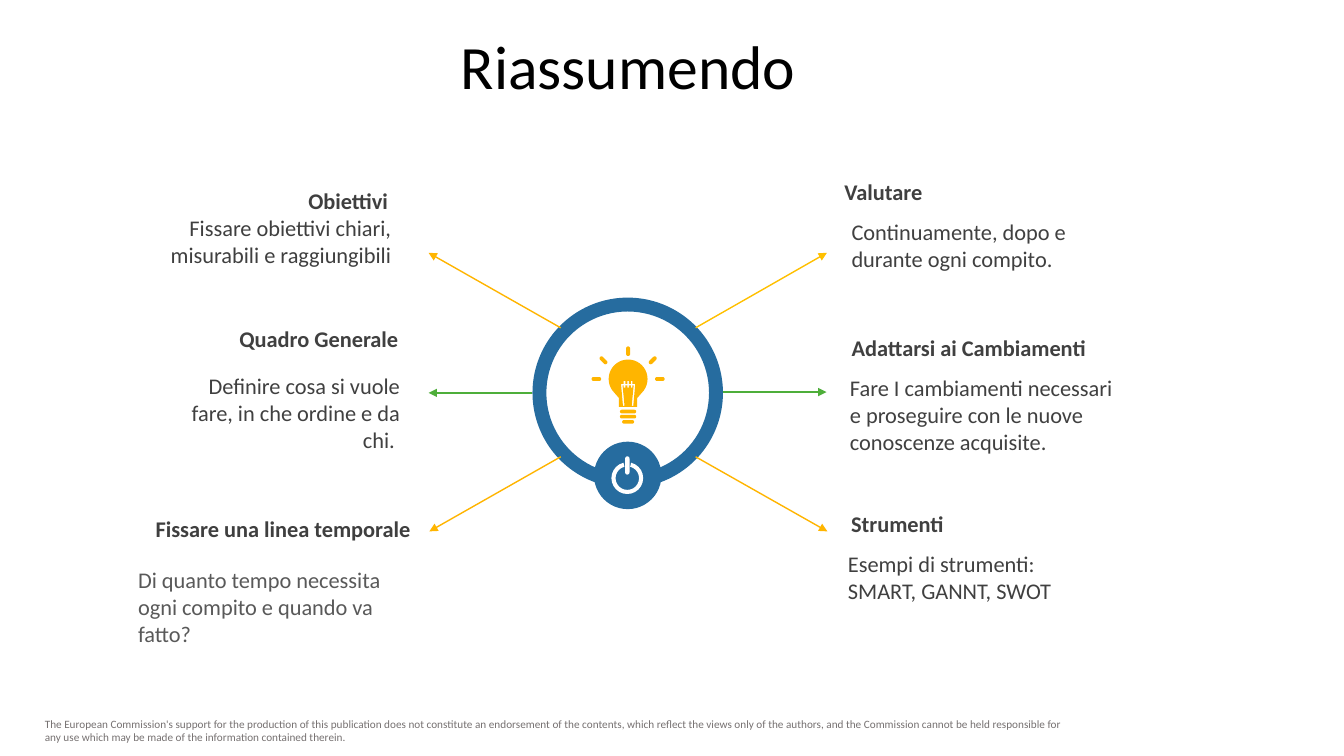
from math import cos, radians, sin

from lxml import etree
from pptx import Presentation
from pptx.dml.color import RGBColor
from pptx.enum import shapes, text
from pptx.oxml.ns import qn
from pptx.util import Cm, Pt

FONT = "Calibri"
BLUE, YELLOW, GOLD, GREEN = "266C9F", "FFB500", "FFC000", "4EAE3A"
WHITE, DARK, CHARCOAL, GREY, PALE = "FFFFFF", "404040", "3F3F3F", "595959", "767171"
LEFT, RIGHT, CENTER = text.PP_ALIGN.LEFT, text.PP_ALIGN.RIGHT, text.PP_ALIGN.CENTER
SHAPE = shapes.MSO_SHAPE

# heading and body: (wording, left, top, width, height, alignment, colour)
TOPICS = [
    (("Obiettivi", 3.78, 4.59, 6.25, 0.94, RIGHT, CHARCOAL),
     ("Fissare obiettivi chiari, misurabili e raggiungibili",
      3.3, 5.25, 6.81, 1.63, RIGHT, CHARCOAL)),
    (("Quadro Generale", 4.04, 8.06, 6.25, 0.94, RIGHT, DARK),
     ("Definire cosa si vuole fare, in che ordine e da chi. ",
      4.08, 9.25, 6.25, 2.31, RIGHT, DARK)),
    (("Fissare una linea temporale", 3.03, 12.5, 7.57, 1.63, RIGHT, CHARCOAL),
     ("Di quanto tempo necessita ogni compito e quando va fatto?",
      3.23, 14.13, 7.57, 2.31, LEFT, GREY)),
    (("Valutare", 21.03, 4.35, 6.25, 0.94, LEFT, DARK),
     ("Continuamente, dopo e durante ogni compito.",
      21.21, 5.35, 6.25, 1.63, LEFT, DARK)),
    (("Adattarsi ai Cambiamenti", 21.21, 7.95, 7.39, 1.63, LEFT, DARK),
     ("Fare I cambiamenti necessari e proseguire con le nuove conoscenze acquisite.",
      21.17, 9.3, 7.39, 2.31, LEFT, DARK)),
    (("Strumenti", 21.2, 12.73, 6.25, 0.94, LEFT, DARK),
     ("Esempi di strumenti: SMART, GANNT, SWOT",
      21.12, 13.72, 6.25, 1.63, LEFT, DARK)),
]

ARROWS = [
    (13.41, 9.9, 10.8, 9.9, GREEN),
    (18.21, 9.88, 20.83, 9.88, GREEN),
    (14.13, 8.26, 10.8, 6.37, YELLOW),
    (17.53, 8.26, 20.84, 6.37, GOLD),
    (17.53, 11.51, 20.85, 13.39, YELLOW),
    (14.13, 11.51, 10.82, 13.39, YELLOW),
]

FOOTER = (
    "The European Commission's support for the production of this publication does not "
    "constitute an endorsement of the contents, which reflect the views only of the authors, "
    "and the Commission cannot be held responsible for any use which may be made of the "
    "information contained therein."
)


def color(value):
    return RGBColor.from_string(value)


def style_text(box, size, tint, align, bold=False):
    frame = box.text_frame
    frame.word_wrap = True
    frame.auto_size = text.MSO_AUTO_SIZE.NONE
    for para in frame.paragraphs:
        para.alignment = align
        for span in para.runs:
            span.font.name = FONT
            span.font.size = Pt(size)
            span.font.bold = bold
            span.font.color.rgb = color(tint)


def add_text(page, wording, left, top, width, height, align, tint, size=16, bold=False):
    box = page.shapes.add_textbox(Cm(left), Cm(top), Cm(width), Cm(height))
    box.text_frame.text = wording
    box.text_frame.vertical_anchor = text.MSO_ANCHOR.MIDDLE
    style_text(box, size, tint, align, bold)


def paint(shape, tint):
    shape.shadow.inherit = False
    shape.fill.solid()
    shape.fill.fore_color.rgb = color(tint)
    shape.line.fill.background()


def add_centred(page, kind, x, y, width, height, tint, adjust=()):
    shape = page.shapes.add_shape(
        kind, Cm(x - width / 2), Cm(y - height / 2), Cm(width), Cm(height))
    for index, value in enumerate(adjust):
        shape.adjustments[index] = value
    paint(shape, tint)


def add_arrow(page, x1, y1, x2, y2, tint):
    line = page.shapes.add_connector(
        shapes.MSO_CONNECTOR.STRAIGHT, Cm(x1), Cm(y1), Cm(x2), Cm(y2))
    line.line.color.rgb = color(tint)
    line.line.width = Pt(1)
    etree.SubElement(line.line._get_or_add_ln(), qn("a:tailEnd"), type="triangle")
    etree.SubElement(line._element.spPr, qn("a:effectLst"))


def arc(x, y, radius, start, end, step=9):
    direction = step if end > start else -step
    return [(x + radius * cos(radians(angle)), y + radius * sin(radians(angle)))
            for angle in range(start, end + direction, direction)]


def capsule(x, y, length, width, angle=0):
    reach = (length - width) / 2
    dx, dy = reach * cos(radians(angle)), reach * sin(radians(angle))
    return (arc(x + dx, y + dy, width / 2, angle - 90, angle + 90, 15)
            + arc(x - dx, y - dy, width / 2, angle + 90, angle + 270, 15))


def filament():
    top, bottom = [], []
    for x in (-0.09, 0, 0.09):
        top += [(x - 0.02, 0.12), (x - 0.02, 0.05), (x + 0.02, 0.05), (x + 0.02, 0.12)]
        bottom += [(x - 0.02, 0.16), (x - 0.02, 0.22), (x + 0.02, 0.22), (x + 0.02, 0.16)]
    right_leg = [(0.18, 0.12), (0.13, 0.68), (0.09, 0.68), (0.14, 0.16)]
    left_leg = [(-x, y) for x, y in reversed(right_leg)]
    return top + right_leg + bottom[::-1] + left_leg


def add_bulb(page, x, y):
    neck = [(-0.23, 0.48), (-0.23, 0.7), (0.23, 0.7), (0.23, 0.48)]
    glass = arc(0, 0, 0.49, 45, -225) + neck
    cap = [capsule(0, 0.82 + 0.13 * row, width, 0.09)
           for row, width in enumerate((0.41, 0.41, 0.3))]
    rays = [capsule(dx, dy, 0.24, 0.1, angle) for dx, dy, angle in (
        (-0.8, 0, 0), (-0.62, -0.47, 45), (0, -0.7, 90), (0.62, -0.47, 135), (0.8, 0, 0))]

    builder = page.shapes.build_freeform(Cm(x), Cm(y))
    for outline in [glass, filament(), *cap, *rays]:
        points = [(Cm(x + dx), Cm(y + dy)) for dx, dy in outline]
        builder.move_to(*points[0])
        builder.add_line_segments(points[1:], close=True)
    paint(builder.convert_to_shape(), YELLOW)


def add_power_sign(page, x, y):
    # Arc angles are stored in units of 1/0.6 degree
    add_centred(page, SHAPE.BLOCK_ARC, x, y, 0.8, 0.8, WHITE,
                [284 * 0.6, 256 * 0.6, 0.13])
    add_centred(page, SHAPE.ROUNDED_RECTANGLE, x, y - 0.32, 0.11, 0.46, WHITE, [0.5])


def main():
    deck = Presentation()
    deck.slide_width, deck.slide_height = Cm(33.87), Cm(19.05)
    page = deck.slides.add_slide(deck.slide_layouts[5])

    # Title and footer
    title = page.shapes.title
    title.left, title.top, title.width, title.height = Cm(7.29), Cm(0.78), Cm(17.09), Cm(2.01)
    title.text_frame.text = "Riassumendo"
    title.text_frame.vertical_anchor = text.MSO_ANCHOR.TOP
    title.text_frame.paragraphs[0].line_spacing = 0.9
    style_text(title, 44, "000000", CENTER)
    add_text(page, FOOTER, 0.88, 17.94, 26.57, 0.94, LEFT, PALE, size=8)

    # Central emblem
    add_centred(page, SHAPE.DONUT, 15.82, 9.9, 4.8, 4.8, BLUE, [0.073])
    add_centred(page, SHAPE.OVAL, 15.82, 11.98, 1.7, 1.7, BLUE)
    add_bulb(page, 15.83, 9.55)
    add_power_sign(page, 15.81, 12.05)

    # Arrows and topics
    for arrow in ARROWS:
        add_arrow(page, *arrow)
    for heading, body in TOPICS:
        add_text(page, *heading, bold=True)
        add_text(page, *body)

    deck.save("out.pptx")


if __name__ == "__main__":
    main()
